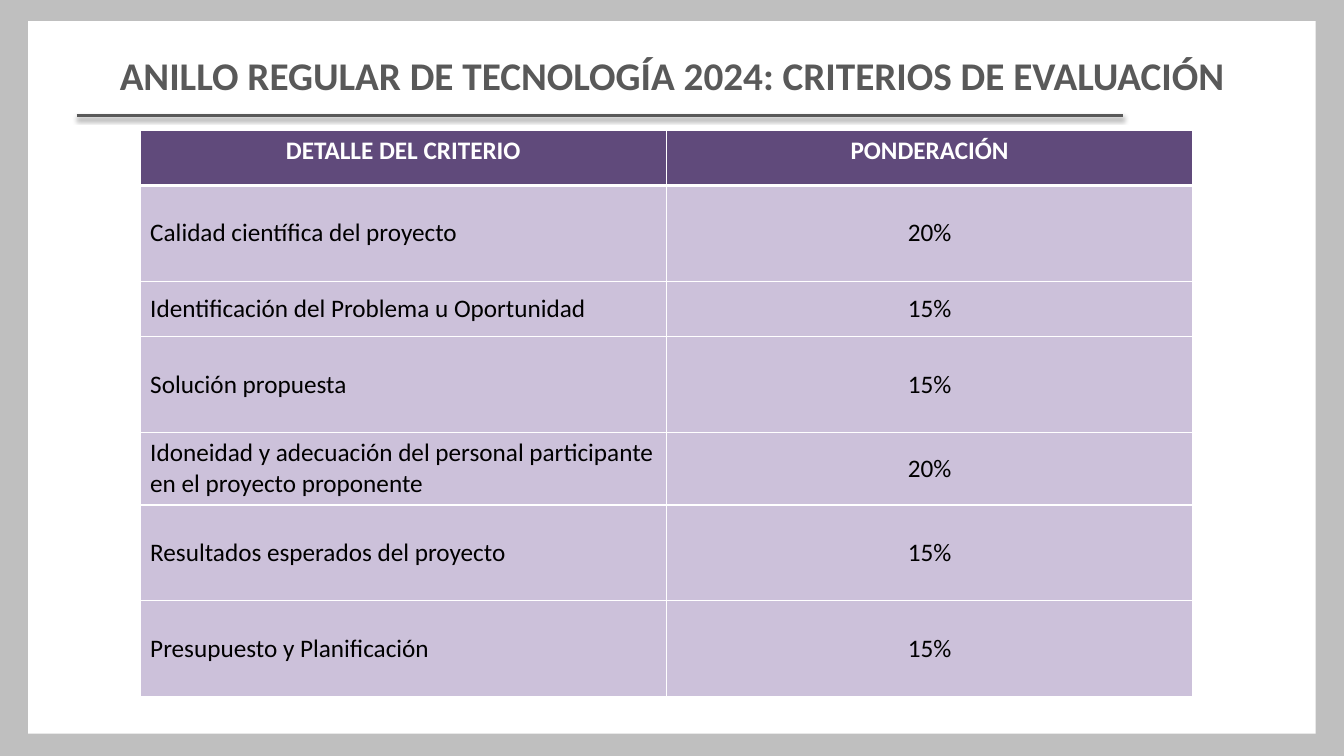
from lxml import etree
from pptx import Presentation
from pptx.dml.color import RGBColor
from pptx.enum.shapes import MSO_CONNECTOR, MSO_SHAPE
from pptx.enum.text import MSO_ANCHOR, PP_ALIGN
from pptx.oxml import parse_xml
from pptx.oxml.ns import nsdecls, qn
from pptx.util import Inches, Pt

# Content
TITLE = "ANILLO REGULAR DE TECNOLOGÍA 2024: CRITERIOS DE EVALUACIÓN"
HEADER = ("DETALLE DEL CRITERIO", "PONDERACIÓN")
CRITERIA = [  # criterion, weight, row height
    ("Calidad científica del proyecto", "20%", 0.95),
    ("Identificación del Problema u Oportunidad", "15%", 0.55),
    ("Solución propuesta", "15%", 0.95),
    ("Idoneidad y adecuación del personal participante en el proyecto proponente", "20%", 0.72),
    ("Resultados esperados del proyecto", "15%", 0.95),
    ("Presupuesto y Planificación", "15%", 0.95),
]

# Style
FONT = "Calibri"
WHITE = RGBColor(0xFF, 0xFF, 0xFF)
BLACK = RGBColor(0, 0, 0)
FRAME_GRAY = RGBColor(0xBF, 0xBF, 0xBF)
DARK_GRAY = RGBColor(0x59, 0x59, 0x59)
PURPLE = RGBColor(0x60, 0x4A, 0x7B)
LILAC = RGBColor(0xCC, 0xC1, 0xDA)
LEFT, CENTER = PP_ALIGN.LEFT, PP_ALIGN.CENTER
TOP, MIDDLE = MSO_ANCHOR.TOP, MSO_ANCHOR.MIDDLE

# Layout, in inches
SLIDE_WIDTH, SLIDE_HEIGHT = 13.33, 7.5
PANEL = (0.28, 0.21, 12.77, 7.07)
TITLE_BOX = (1.09, 0.46, 12.24, 0.69)
RULE_LEFT, RULE_RIGHT, RULE_Y = 0.76, 11.14, 1.15
TABLE_LEFT, TABLE_TOP, COLUMN_WIDTH = 1.39, 1.29, 5.22
HEADER_HEIGHT = 0.55


def inches(box):
    return [Inches(value) for value in box]


def add_panel(slide, box, color):
    shape = slide.shapes.add_shape(MSO_SHAPE.RECTANGLE, *inches(box))
    shape.shadow.inherit = False
    shape.fill.solid()
    shape.fill.fore_color.rgb = color
    shape.line.fill.background()


def write(text_frame, text, size, color, bold, alignment):
    paragraph = text_frame.paragraphs[0]
    paragraph.text = text
    paragraph.alignment = alignment
    font = paragraph.font
    font.name, font.size, font.bold = FONT, Pt(size), bold
    font.color.rgb = color


def add_rule(slide):
    rule = slide.shapes.add_connector(
        MSO_CONNECTOR.STRAIGHT, *inches((RULE_LEFT, RULE_Y, RULE_RIGHT, RULE_Y)))
    rule.line.color.rgb = DARK_GRAY
    rule.line.width = Pt(2.25)
    rule._element.spPr.append(parse_xml(
        f'<a:effectLst {nsdecls("a")}><a:outerShdw blurRad="{Pt(3.1)}" dist="{Pt(1.6)}" '
        'dir="5400000" rotWithShape="0"><a:srgbClr val="000000"><a:alpha val="38000"/>'
        '</a:srgbClr></a:outerShdw></a:effectLst>'))


def set_borders(cell, widths):
    properties = cell._tc.get_or_add_tcPr()
    for side, width in widths.items():
        line = etree.SubElement(properties, qn(f"a:ln{side}"), w=str(Pt(width)))
        fill = etree.SubElement(line, qn("a:solidFill"))
        etree.SubElement(fill, qn("a:srgbClr"), val=str(WHITE))


def add_criteria_table(slide):
    rows = [(*HEADER, HEADER_HEIGHT)] + CRITERIA
    heights = [row[-1] for row in rows]
    box = (TABLE_LEFT, TABLE_TOP, COLUMN_WIDTH * len(HEADER), sum(heights))
    table = slide.shapes.add_table(len(rows), len(HEADER), *inches(box)).table
    for column in table.columns:
        column.width = Inches(COLUMN_WIDTH)
    for row_index, (*texts, height) in enumerate(rows):
        table.rows[row_index].height = Inches(height)
        is_header = row_index == 0
        for column_index, text in enumerate(texts):
            cell = table.cell(row_index, column_index)
            set_borders(cell, {"L": 1, "R": 1, "T": 3 if row_index == 1 else 1,
                               "B": 3 if is_header else 1})
            cell.fill.solid()
            cell.fill.fore_color.rgb = PURPLE if is_header else LILAC
            cell.vertical_anchor = TOP if is_header else MIDDLE
            write(cell.text_frame, text, 18, WHITE if is_header else BLACK, is_header,
                  CENTER if is_header or column_index else LEFT)


def main():
    presentation = Presentation()
    presentation.slide_width = Inches(SLIDE_WIDTH)
    presentation.slide_height = Inches(SLIDE_HEIGHT)
    slide = presentation.slides.add_slide(presentation.slide_layouts[6])

    # Frame
    add_panel(slide, (0, 0, SLIDE_WIDTH, SLIDE_HEIGHT), FRAME_GRAY)
    add_panel(slide, PANEL, WHITE)

    # Title and rule
    title = slide.shapes.add_textbox(*inches(TITLE_BOX)).text_frame
    title.word_wrap = True
    write(title, TITLE, 28, DARK_GRAY, True, LEFT)
    add_rule(slide)

    # Criteria
    add_criteria_table(slide)
    presentation.save("out.pptx")


if __name__ == "__main__":
    main()
